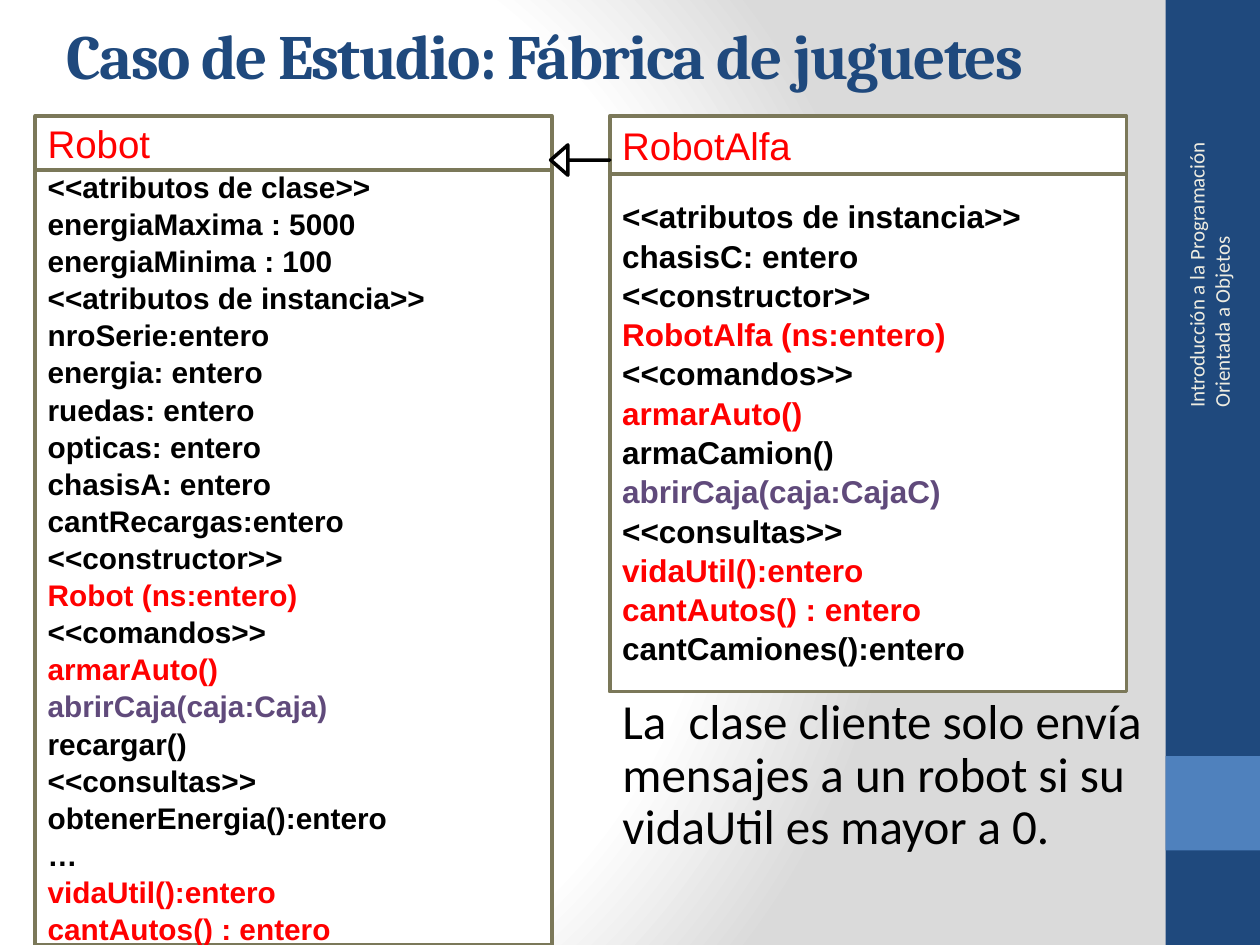
from pptx import Presentation
from pptx.dml.color import RGBColor
from pptx.enum.shapes import MSO_SHAPE
from pptx.enum.text import MSO_ANCHOR, MSO_AUTO_SIZE, PP_ALIGN
from pptx.oxml import parse_xml
from pptx.util import Inches, Pt

RECT, ARROW = MSO_SHAPE.RECTANGLE, MSO_SHAPE.RIGHT_ARROW
MID, TOP = MSO_ANCHOR.MIDDLE, MSO_ANCHOR.TOP
LEFT, FIXED = PP_ALIGN.LEFT, MSO_AUTO_SIZE.NONE
NS = "http://schemas.openxmlformats.org/drawingml/2006/main"

NAVY, BLUE, CREAM, OLIVE = "1F497D", "4F81BD", "EEECE1", "7B7859"
WHITE, BLACK, RED, PURPLE = "FFFFFF", "000000", "FF0000", "604A7B"
STOPS = [(0, WHITE), (75, WHITE), (100, "DADADA")]

TITLE = "Caso de Estudio: Fábrica de juguetes"
COURSE = "Introducción a la Programación Orientada a Objetos"
NOTE = "La  clase cliente solo envía mensajes a un robot si su vidaUtil es mayor a 0."
ROBOT = [
    "<<atributos de clase>>", "energiaMaxima : 5000", "energiaMinima : 100",
    "<<atributos de instancia>>", "nroSerie:entero", "energia: entero",
    "ruedas: entero", "opticas: entero", "chasisA: entero",
    "cantRecargas:entero", "<<constructor>>", "Robot (ns:entero)",
    "<<comandos>>", "armarAuto()", "abrirCaja(caja:Caja)", "recargar()",
    "<<consultas>>", "obtenerEnergia():entero", "…", "vidaUtil():entero",
    "cantAutos() : entero",
]
ALFA = [
    "<<atributos de instancia>>", "chasisC: entero", "<<constructor>>",
    "RobotAlfa (ns:entero)", "<<comandos>>", "armarAuto()", "armaCamion()",
    "abrirCaja(caja:CajaC)", "<<consultas>>", "vidaUtil():entero",
    "cantAutos() : entero", "cantCamiones():entero",
]
TINTS = {
    RED: ("Robot (", "RobotAlfa (", "armarAuto", "vidaUtil", "cantAutos"),
    PURPLE: ("abrirCaja",),
}
# name, members, left, head height, body top, body height, text size
CARDS = [
    ("Robot", ROBOT, 0.28, 0.43, 1.34, 6.16, 17),
    ("RobotAlfa", ALFA, 4.84, 0.46, 1.36, 4.13, 18),
]
HEAD, WIDE = 0.92, 4.1


def color(code):
    return RGBColor.from_string(code)


def tint(text):
    for code, starts in TINTS.items():
        if text.startswith(starts):
            return code
    return BLACK


def place(shape, *box):
    for key, val in zip(("left", "top", "width", "height"), box):
        setattr(shape, key, Inches(val))


def write(shape, lines, size, face, bold=False, anchor=MID, space=1.0):
    """Fill a shape with (text, colour) lines, one paragraph each."""
    frame = shape.text_frame
    form = {"word_wrap": True, "auto_size": FIXED, "vertical_anchor": anchor}
    for key, val in form.items():
        setattr(frame, key, val)
    frame.text = "\n".join(text for text, _ in lines)
    for par, (_, code) in zip(frame.paragraphs, lines):
        form = {"alignment": LEFT, "line_spacing": space, "space_before": Pt(0)}
        for key, val in form.items():
            setattr(par, key, val)
        font = par.runs[0].font
        for key, val in {"size": Pt(size), "name": face, "bold": bold}.items():
            setattr(font, key, val)
        font.color.rgb = color(code)


def draw(kind, box, fill, line=None):
    shape = slide.shapes.add_shape(kind, *map(Inches, box))
    shape.shadow.inherit = False
    shape.fill.solid()
    shape.fill.fore_color.rgb = color(fill)
    if line:
        shape.line.color.rgb = color(line)
        shape.line.width = Pt(2)
    else:
        shape.line.fill.background()
    return shape


def paint(fill):
    """Give the background its radial gradient."""
    fill.gradient()
    grad = slide._element.find(f".//{{{NS}}}gradFill")
    stops = "".join(
        f'<a:gs pos="{pos * 1000}"><a:srgbClr val="{code}"/></a:gs>'
        for pos, code in STOPS)
    grad.getparent().replace(grad, parse_xml(
        f'<a:gradFill xmlns:a="{NS}" rotWithShape="1"><a:gsLst>{stops}</a:gsLst>'
        '<a:path path="circle"><a:fillToRect l="20000" t="50000" r="100000" '
        'b="50000"/></a:path></a:gradFill>'))


deck = Presentation()
deck.slide_width, deck.slide_height = Inches(10), Inches(7.5)
slide = deck.slides.add_slide(deck.slide_layouts[1])
paint(slide.background.fill)

draw(RECT, (9.25, 0, 0.75, 7.5), NAVY)
draw(RECT, (9.25, 6, 0.75, 0.75), BLUE)
side = slide.shapes.add_textbox(*map(Inches, (8.26, 1.8, 2.67, 0.4)))
side.rotation = 270
write(side, [(COURSE, CREAM)], 12, "Calibri")

for name, members, left, tall, top, deep, size in CARDS:
    body = draw(RECT, (left, top, WIDE, deep), WHITE, OLIVE)
    write(body, [(text, tint(text)) for text in members], size, "Arial",
          bold=True, space=1.04)
    head = draw(RECT, (left, HEAD, WIDE, tall), WHITE, OLIVE)
    write(head, [(name, RED)], 22, "Arial")

arrow = draw(ARROW, (4.37, 1.15, 0.47, 0.24), WHITE, BLACK)
arrow.rotation = 180
arrow.adjustments[0], arrow.adjustments[1] = 0, 0.57

note = slide.placeholders[1]
place(note, 4.84, 5.48, 4.33, 2.02)
write(note, [(NOTE, BLACK)], 28, "Calibri", anchor=TOP, space=0.9)
props = note.text_frame.paragraphs[0]._p.get_or_add_pPr()
props.set("marL", "0")
props.set("indent", "0")
props.append(parse_xml(f'<a:buNone xmlns:a="{NS}"/>'))

title = slide.shapes.title
place(title, 0.43, 0.05, 9.14, 0.76)
write(title, [(TITLE, NAVY)], 36, "Cambria", bold=True)
title.text_frame.paragraphs[0].runs[0].font._element.set("spc", "-100")

deck.save("out.pptx")
